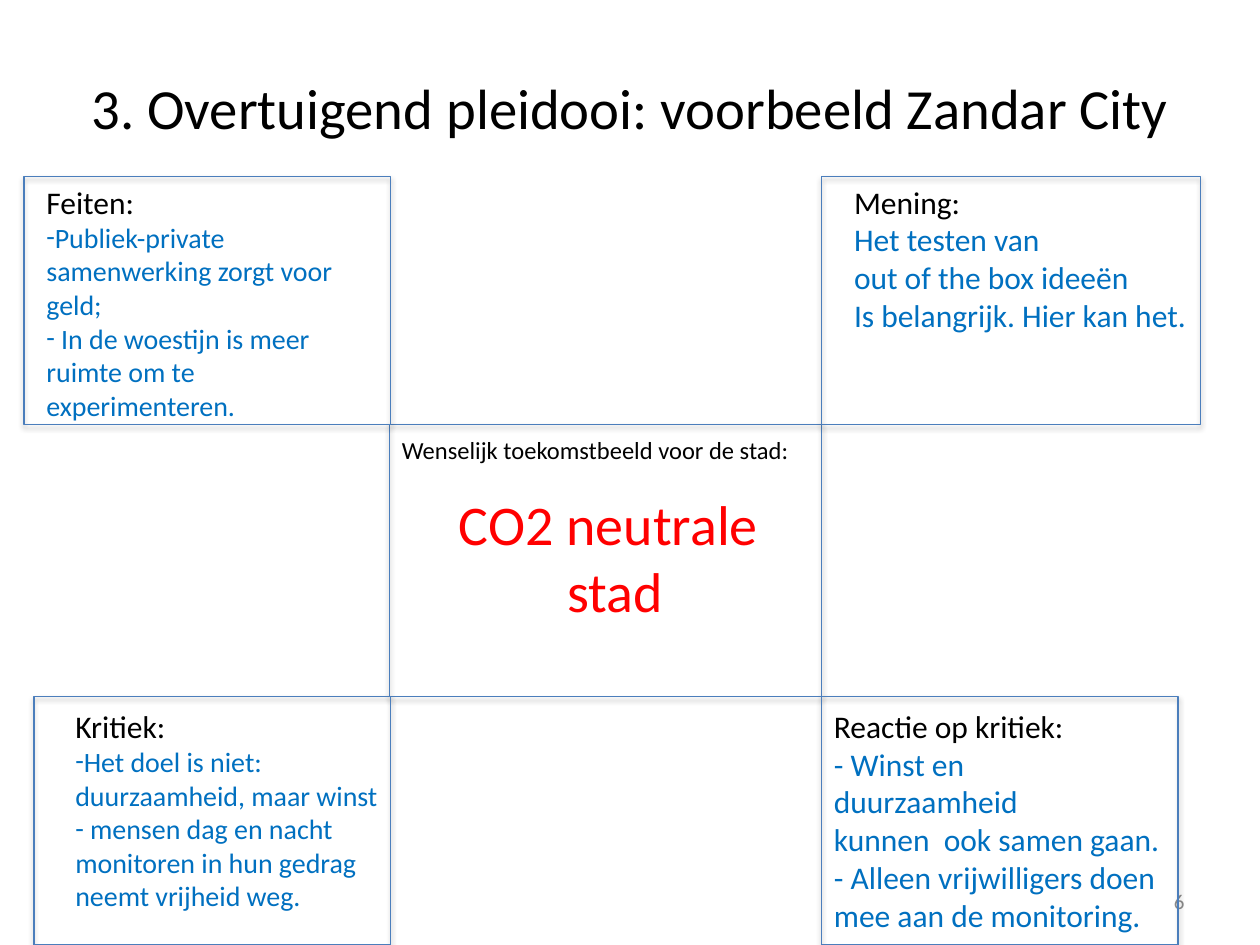
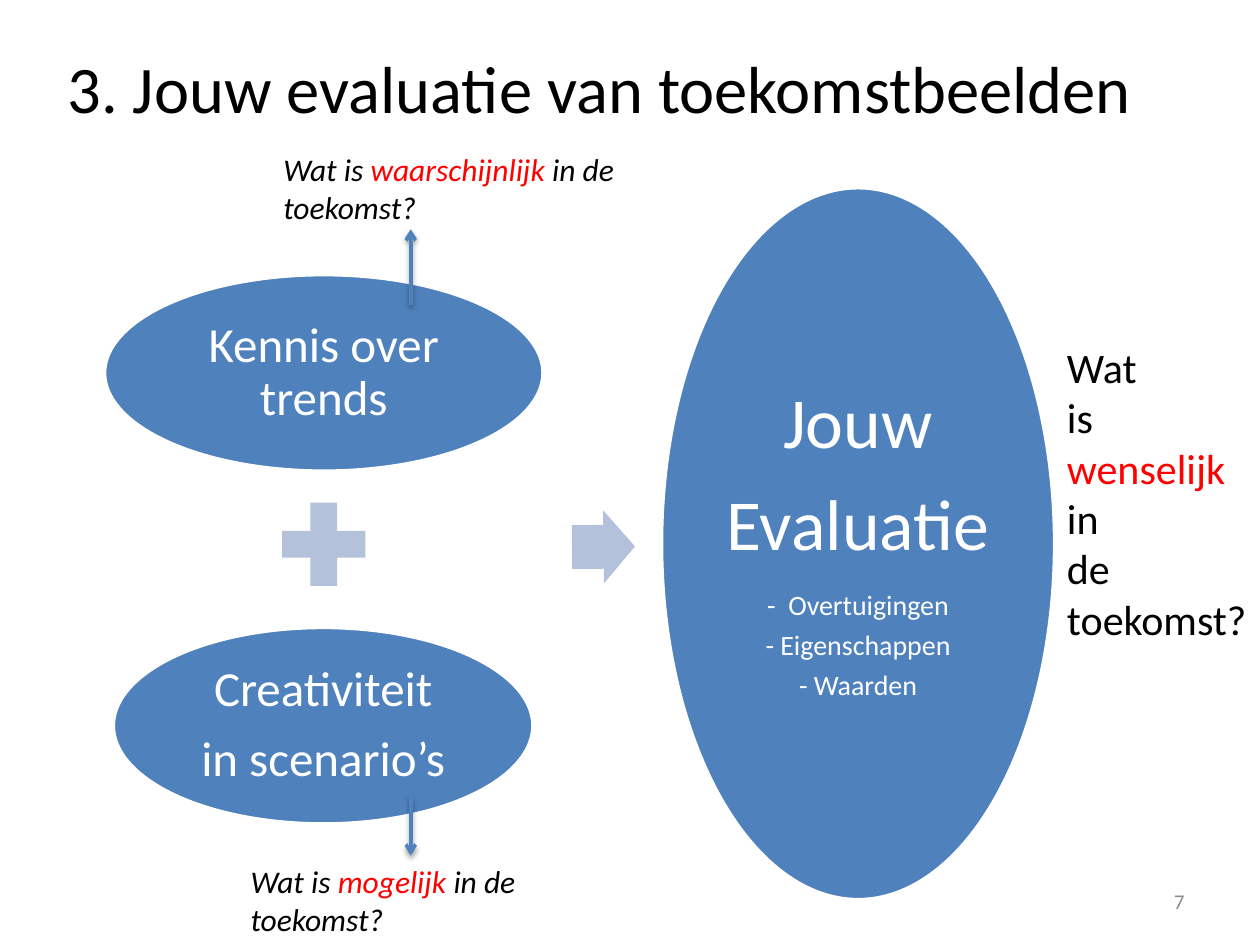
import pptx
import pptx.util
import pptx.dml.color
import pptx.enum.shapes
import pptx.enum.text
import pptx.oxml
from pptx.oxml.ns import nsdecls

Inches = pptx.util.Inches
Pt = pptx.util.Pt
SHAPE = pptx.enum.shapes.MSO_SHAPE
ALIGN = pptx.enum.text.PP_ALIGN
ANCHOR = pptx.enum.text.MSO_ANCHOR

FONT = "Calibri"
HEX = {
    "black": "000000", "white": "FFFFFF", "red": "FF0000", "text": "0070C0",
    "fill": "4F81BD", "edge": "4B7EBC", "pale": "B3C1DB", "grey": "8C8C8C",
}

# Grid of the argument scheme: inner columns and rows
COL1, COL2 = 3.09, 6.52
ROW1, ROW2 = 3.37, 5.53
HIGH = 1.97


def color(name):
    return pptx.dml.color.RGBColor.from_string(HEX[name])


def box(x, y, w, h):
    return [Inches(n) for n in (x, y, w, h)]


def style(para, size, tone, align=None, italic=None):
    font = para.font
    font.name, font.size, font.italic = FONT, Pt(size), italic
    font.color.rgb = color(tone)
    para.alignment = align


def shade(shape, alpha):
    """Soft shadow straight below the shape."""
    props = shape._element.spPr
    for old in props.findall(pptx.oxml.ns.qn("a:effectLst")):
        props.remove(old)
    props.append(pptx.oxml.parse_xml(
        f'<a:effectLst {nsdecls("a")}><a:outerShdw blurRad="{Pt(3.1)}" '
        f'dist="{Pt(1.8)}" dir="5400000" rotWithShape="0">'
        f'<a:srgbClr val="{HEX["black"]}"><a:alpha val="{alpha * 1000}"/>'
        '</a:srgbClr></a:outerShdw></a:effectLst>'))


def dash(para):
    """Hyphen bullet in the text font, without indent."""
    props = para._p.get_or_add_pPr()
    props.set("marL", "0")
    props.set("indent", "0")
    for tag in (f'buFont {nsdecls("a")} typeface="{FONT}"',
                f'buChar {nsdecls("a")} char="-"'):
        mark = pptx.oxml.parse_xml(f"<a:{tag}/>")
        props.insert_element_before(mark, "a:tabLst", "a:defRPr", "a:extLst")


def new_slide(prs, title, place, size, number):
    slide = prs.slides.add_slide(prs.slide_layouts[5])
    head = slide.shapes.title
    head.left, head.top, head.width, head.height = box(*place)
    head.text_frame.text = title
    style(head.text_frame.paragraphs[0], size, "black", ALIGN.CENTER)
    note = add_text(slide, (7.17, 6.95, 2.33, 0.4),
                    [(number, 12, "grey")], ALIGN.RIGHT)
    note.vertical_anchor = ANCHOR.MIDDLE
    return slide


def fill_text(frame, lines, align=None, italic=None):
    """Each line is (text, size, tone); text may be a list of (text, tone)."""
    for i, (text, size, tone) in enumerate(lines):
        para = frame.paragraphs[0] if i == 0 else frame.add_paragraph()
        style(para, size, tone, align, italic)
        if isinstance(text, str):
            para.add_run().text = text
            continue
        for part, hue in text:
            run = para.add_run()
            run.text = part
            run.font.color.rgb = color(hue)


def add_text(slide, place, lines, align=None, italic=None, wrap=True):
    frame = slide.shapes.add_textbox(*box(*place)).text_frame
    frame.word_wrap = wrap
    fill_text(frame, lines, align, italic)
    return frame


def add_shape(slide, kind, place, fill=None, line=None, width=1):
    shape = slide.shapes.add_shape(kind, *box(*place))
    shape.shadow.inherit = False
    if fill:
        shape.fill.solid()
        shape.fill.fore_color.rgb = color(fill)
    else:
        shape.fill.background()
    if line:
        shape.line.color.rgb = color(line)
        shape.line.width = Pt(width)
    else:
        shape.line.fill.background()
    return shape


def add_frame(slide, place):
    shade(add_shape(slide, SHAPE.RECTANGLE, place, line="edge", width=0.75), 35)


def add_card(slide, place, head, lines, size, marks=False):
    """Black heading with blue lines below."""
    frame = add_text(slide, place, [(head, 18, "black")]
                     + [(line, size, "text") for line in lines])
    if marks:
        for para in frame.paragraphs[1:]:
            dash(para)


def add_oval(slide, place, lines, inset):
    shape = add_shape(slide, SHAPE.OVAL, place, "fill", "white", 2)
    frame = shape.text_frame
    frame.word_wrap = True
    frame.vertical_anchor = ANCHOR.MIDDLE
    frame.margin_left = frame.margin_right = Inches(inset)
    frame.margin_top = frame.margin_bottom = Inches(inset)
    fill_text(frame, [(text, size, "white") for text, size in lines],
              ALIGN.CENTER)
    for para, (_, size) in zip(frame.paragraphs, lines):
        para.line_spacing = 0.9
        para.space_after = Pt(round(size * 0.35, 1))


def add_arrow(slide, x, start, end):
    line = slide.shapes.add_connector(
        pptx.enum.shapes.MSO_CONNECTOR.STRAIGHT,
        Inches(x), Inches(start), Inches(x), Inches(end))
    line.line.color.rgb = color("fill")
    line.line.width = Pt(2)
    line.line._get_or_add_ln().append(
        pptx.oxml.parse_xml(f'<a:tailEnd {nsdecls("a")} type="arrow"/>'))
    shade(line, 38)


def add_ask(slide, place, word):
    add_text(slide, place, [([("Wat is ", "black"), (word + " ", "red"),
                              ("in de toekomst?", "black")], 18, "black")],
             italic=True)


def plea_slide(prs):
    slide = new_slide(prs, "3. Overtuigend pleidooi: voorbeeld Zandar City",
                      (0.5, 0.3, 9, 1.1), 32.4, "6")
    # Centre frame and four corner frames
    add_frame(slide, (COL1, ROW1, COL2 - COL1, ROW2 - ROW1))
    for left, top, width in ((0.19, ROW1 - HIGH, 2.91), (COL2, ROW1 - HIGH, 3.01),
                             (0.27, ROW2, 2.83), (COL2, ROW2, 2.83)):
        add_frame(slide, (left, top, width, HIGH))

    # Arguments
    add_card(slide, (0.27, 1.4, 2.83, 2.42), "Feiten:", [
        "Publiek-private samenwerking zorgt voor geld;",
        " In de woestijn is meer ruimte om te experimenteren."], 16, True)
    add_card(slide, (6.68, 1.4, 3.07, 1.31), "Mening:", [
        "Het testen van", "out of the box ideeën",
        "Is belangrijk. Hier kan het."], 18)
    add_card(slide, (0.5, 5.56, 2.93, 1.75), "Kritiek:", [
        "Het doel is niet: duurzaamheid, maar winst",
        " mensen dag en nacht monitoren in hun gedrag neemt vrijheid weg."],
        16, True)
    add_card(slide, (6.52, 5.56, 2.82, 1.92), "Reactie op kritiek:", [
        "- Winst en", "duurzaamheid", "kunnen  ook samen gaan.",
        "- Alleen vrijwilligers doen mee aan de monitoring."], 18)

    # Vision in the centre
    frame = add_text(slide, (COL1, 3.4, 3.58, 1.82), [
        ("Wenselijk toekomstbeeld voor de stad:", 14, "black"),
        ("CO2 neutrale ", 32, "red"), ("stad", 32, "red")])
    for para in frame.paragraphs[1:]:
        para.alignment = ALIGN.CENTER
    frame.paragraphs[1].space_before = Pt(14.4)


def vision_slide(prs):
    slide = new_slide(prs, "3. Jouw evaluatie van toekomstbeelden",
                      (0.26, 0.27, 9, 0.84), 38, "7")
    # Sum of two ovals leading to the large one
    add_oval(slide, (0.83, 2.18, 3.48, 1.56), [("Kennis over trends", 28)], 0.04)
    add_shape(slide, SHAPE.MATH_PLUS, (2.12, 3.87, 0.9, 0.9), "pale")
    add_oval(slide, (0.9, 4.98, 3.33, 1.56),
             [("Creativiteit", 28), ("in scenario’s", 28)], 0.04)
    arrow = add_shape(slide, SHAPE.RIGHT_ARROW, (4.54, 4.05, 0.5, 0.58), "pale")
    arrow.adjustments[0] = 0.6
    arrow.rotation = 359.4
    add_oval(slide, (5.25, 1.49, 3.12, 5.65), [
        ("Jouw", 41), ("Evaluatie", 41), ("-  Overtuigingen", 16),
        ("- Eigenschappen", 16), ("- Waarden", 16)], 0.06)

    # Questions about the future
    add_ask(slide, (2.15, 1.14, 3.78, 0.71), "waarschijnlijk")
    add_arrow(slide, 3.26, 2.42, 1.82)
    add_ask(slide, (1.89, 6.79, 2.74, 0.71), "mogelijk")
    add_arrow(slide, 3.26, 6.32, 6.79)
    words = ["Wat", "is", "wenselijk", "in", "de", "toekomst?"]
    add_text(slide, (8.37, 2.66, 1.64, 2.52),
             [(word, 24, "red" if word == "wenselijk" else "black")
              for word in words], wrap=False)


def main():
    prs = pptx.Presentation()
    prs.slide_width, prs.slide_height = Inches(10), Inches(7.5)
    plea_slide(prs)
    vision_slide(prs)
    prs.save("out.pptx")


if __name__ == "__main__":
    main()
